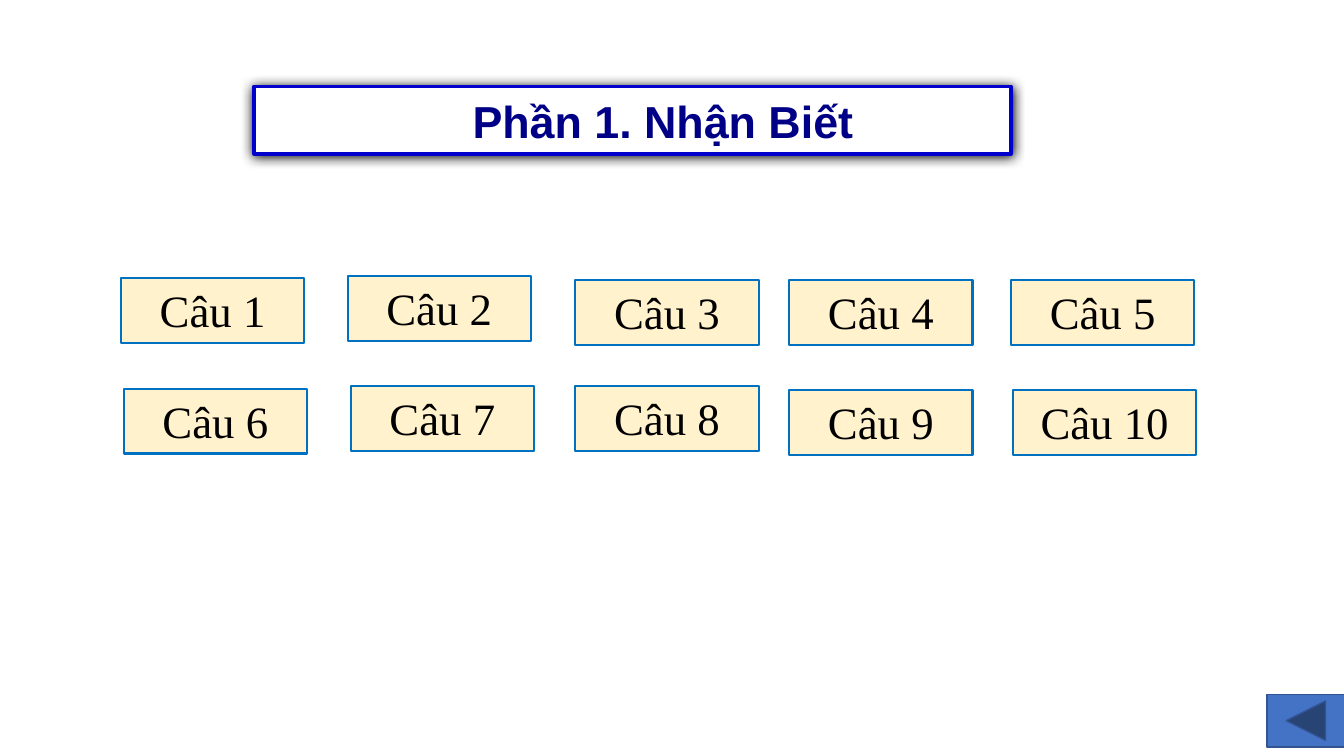
from lxml import etree
from pptx import Presentation
from pptx import util as u
from pptx.dml.color import RGBColor
from pptx.enum import shapes, text
from pptx.oxml import parse_xml

A = "http://schemas.openxmlformats.org/drawingml/2006/main"
QUESTION_ROWS = [
    [(3.05, 7.01), (8.76, 6.96), (14.5, 7.06), (19.89, 7.06), (25.48, 7.06)],
    [(3.12, 9.8), (8.84, 9.73), (14.5, 9.73), (19.89, 9.83), (25.53, 9.83)],
]


def colour(value):
    """Return the colour for a hex string."""
    return RGBColor.from_string(value)


def paint(shape, fill, line, width):
    """Set the fill and outline of a shape."""
    shape.fill.solid()
    shape.fill.fore_color.rgb = colour(fill)
    shape.line.color.rgb = colour(line)
    shape.line.width = u.Pt(width)


def write(shape, wording, font, ink, bold=False):
    """Put one centred line of text in a shape."""
    frame = shape.text_frame
    frame.text = wording
    frame.word_wrap = True
    line = frame.paragraphs[0]
    line.alignment = text.PP_ALIGN.CENTER
    style = line.runs[0].font
    style.name, style.size, style.bold = font, u.Pt(32), bold
    style.color.rgb = colour(ink)


def add_heading(slide, left, top, width, height):
    """Shape the title placeholder as a shadowed pill."""
    heading = slide.shapes.title
    heading.left, heading.top = u.Cm(left), u.Cm(top)
    heading.width, heading.height = u.Cm(width), u.Cm(height)
    properties = heading.element.spPr
    properties.append(parse_xml(
        f'<a:prstGeom xmlns:a="{A}" prst="roundRect"><a:avLst>'
        '<a:gd name="adj" fmla="val 50000"/></a:avLst></a:prstGeom>'))
    paint(heading, "FFFFFF", "0000CC", 2.25)
    effects = etree.SubElement(properties, f"{{{A}}}effectLst")
    effects.append(parse_xml(
        f'<a:outerShdw xmlns:a="{A}" blurRad="{u.Pt(8.5)}" dist="{u.Pt(1)}" '
        'dir="5400000" algn="ctr" rotWithShape="0">'
        '<a:srgbClr val="000000"/></a:outerShdw>'))
    write(heading, "Phần 1. Nhận Biết", "Arial", "000086", True)
    frame = heading.text_frame
    frame.auto_size = text.MSO_AUTO_SIZE.NONE
    frame.vertical_anchor = text.MSO_ANCHOR.MIDDLE
    frame.margin_left = u.Cm(1.8)


def add_question(slide, number, left, top, width=4.62, height=1.63):
    """Add one numbered question card."""
    card = slide.shapes.add_shape(
        shapes.MSO_SHAPE.RECTANGLE,
        u.Cm(left), u.Cm(top), u.Cm(width), u.Cm(height))
    card.shadow.inherit = False
    paint(card, "FFF2CC", "0070C0", 1.5)
    write(card, f"Câu {number}", "Times New Roman", "000000")
    card.text_frame.vertical_anchor = text.MSO_ANCHOR.TOP
    card.text_frame.auto_size = text.MSO_AUTO_SIZE.SHAPE_TO_FIT_TEXT


def add_back_button(slide, left, top, width, height):
    """Add the button that leads back."""
    back = slide.shapes.add_shape(
        shapes.MSO_SHAPE.ACTION_BUTTON_BACK_OR_PREVIOUS,
        u.Cm(left), u.Cm(top), u.Cm(width), u.Cm(height))
    back.shadow.inherit = False
    paint(back, "4472C4", "325491", 1)


def main():
    """Build the question menu and save it."""
    deck = Presentation()
    deck.slide_width, deck.slide_height = u.Cm(33.87), u.Cm(19.05)
    slide = deck.slides.add_slide(deck.slide_layouts[5])
    add_heading(slide, 6.4, 2.18, 19.08, 1.7)
    corners = [corner for row in QUESTION_ROWS for corner in row]
    for number, (left, top) in enumerate(corners, 1):
        add_question(slide, number, left, top)
    add_back_button(slide, 31.93, 17.5, 1.96, 1.32)
    deck.save("out.pptx")


if __name__ == "__main__":
    main()
